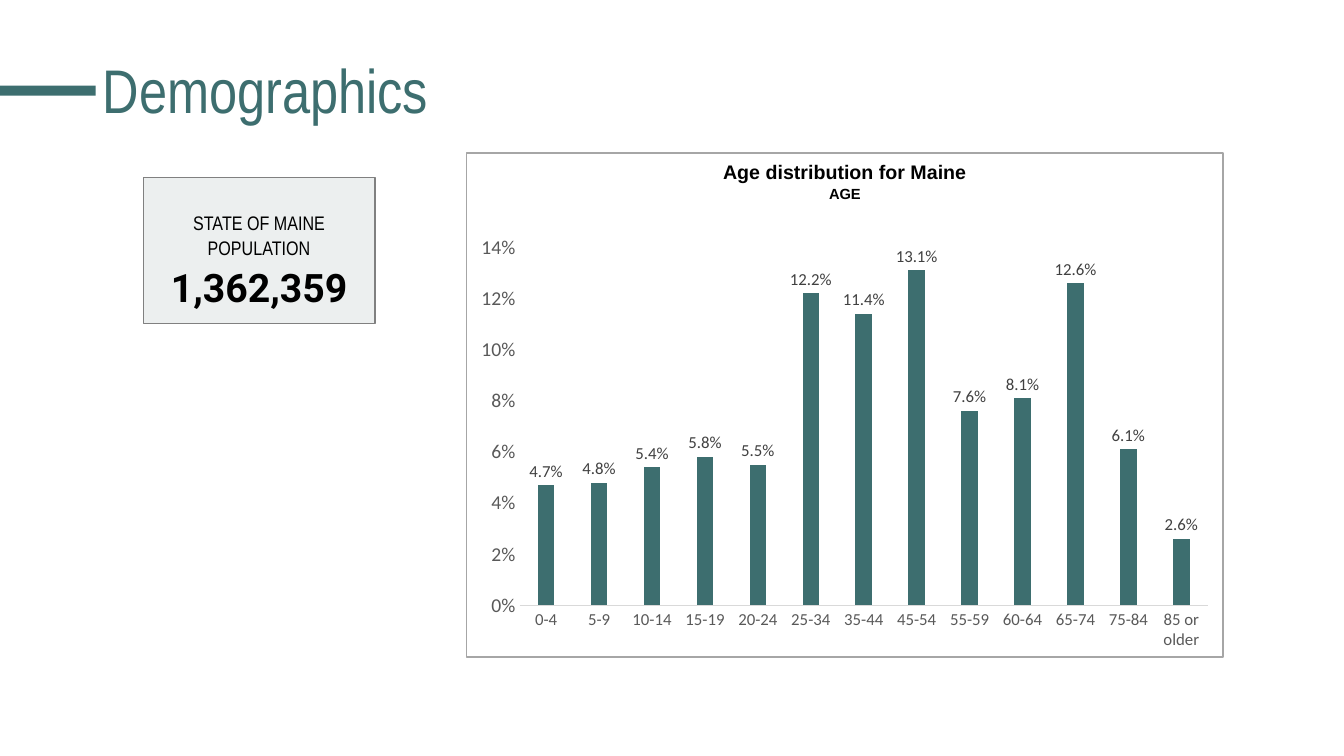
from lxml import etree
from pptx import Presentation
from pptx.chart.data import CategoryChartData
from pptx.dml.color import RGBColor
from pptx.enum.chart import XL_CHART_TYPE as ChartType
from pptx.enum.chart import XL_LABEL_POSITION as LabelPosition
from pptx.enum.chart import XL_TICK_MARK as TickMark
from pptx.enum.shapes import MSO_SHAPE as Preset
from pptx.enum.text import MSO_ANCHOR as Anchor
from pptx.enum.text import PP_ALIGN as Align
from pptx.oxml.ns import qn
from pptx.util import Inches, Pt

TEAL, BLACK = "3D6E6F", "000000"
AGE_SHARES = {
    "0-4": 0.047, "5-9": 0.048, "10-14": 0.054, "15-19": 0.058, "20-24": 0.055,
    "25-34": 0.122, "35-44": 0.114, "45-54": 0.131, "55-59": 0.076, "60-64": 0.081,
    "65-74": 0.126, "75-84": 0.061, "85 or older": 0.026,
}


def color(hex_text):
    return RGBColor.from_string(hex_text)


def style(font, name, size, hex_text, bold=False):
    font.name, font.size, font.bold = name, Pt(size), bold
    font.color.rgb = color(hex_text)


def add_rect(page, box, fill=None, line=None, width=0.75):
    rect = page.shapes.add_shape(Preset.RECTANGLE, *map(Inches, box))
    rect.shadow.inherit = False
    if fill:
        rect.fill.solid()
        rect.fill.fore_color.rgb = color(fill)
    else:
        rect.fill.background()
    if line:
        rect.line.color.rgb = color(line)
        rect.line.width = Pt(width)
    else:
        rect.line.fill.background()
    return rect


def write_lines(frame, lines, align, spacing):
    """Each line is (text, font, size, colour, bold)."""
    frame.word_wrap = True
    frame.text = "\n".join(line[0] for line in lines)
    for para, (_, *look) in zip(frame.paragraphs, lines):
        para.alignment, para.line_spacing = align, spacing
        for span in para.runs:
            style(span.font, *look)


def add_heading(page, box):
    left, top, width, height = box
    # Accent bar from the slide edge to the title
    add_rect(page, (0, top + 0.65, left + 0.03, 0.1), fill=TEAL)
    title = page.shapes.add_textbox(*map(Inches, box))
    title.text_frame.vertical_anchor = Anchor.MIDDLE
    write_lines(title.text_frame, [("Demographics", "Arial Narrow", 44, TEAL, False)],
                Align.LEFT, 0.9)


def add_population_card(page, box):
    frame = add_rect(page, box, fill="ECEFEF", line="808080").text_frame
    frame.vertical_anchor = Anchor.MIDDLE
    frame.margin_left = frame.margin_right = frame.margin_bottom = 0
    frame.margin_top = Inches(0.18)
    write_lines(frame, [
        ("STATE OF MAINE", "Arial Narrow", 14, BLACK, False),
        ("POPULATION", "Arial Narrow", 14, BLACK, False),
        ("1,362,359", "Roboto", 28, BLACK, True),
    ], Align.CENTER, 1.07)


def place_plot(chart, **shares):
    """Fix the inner plot area as shares of the chart."""
    area = chart.plots[0]._element.getparent()
    for old in area.findall(qn("c:layout")):
        area.remove(old)
    layout = etree.Element(qn("c:layout"))
    manual = etree.SubElement(layout, qn("c:manualLayout"))
    settings = {"layoutTarget": "inner", "xMode": "edge", "yMode": "edge", **shares}
    for tag, value in settings.items():
        etree.SubElement(manual, qn(f"c:{tag}")).set("val", str(value))
    area.insert(0, layout)


def add_age_chart(page, box):
    data = CategoryChartData(number_format="0.0%")
    data.categories = list(AGE_SHARES)
    data.add_series("Series 1", list(AGE_SHARES.values()))
    chart = page.shapes.add_chart(ChartType.COLUMN_CLUSTERED, *map(Inches, box), data).chart
    chart.has_legend = chart.has_title = False
    style(chart.font, "Calibri", 10, BLACK)
    place_plot(chart, x=0.07, y=0.05, w=0.91, h=0.83)

    # Axes
    ages, shares = chart.category_axis, chart.value_axis
    for axis, size in ((ages, 12), (shares, 14)):
        axis.major_tick_mark = axis.minor_tick_mark = TickMark.NONE
        axis.has_major_gridlines = False
        style(axis.tick_labels.font, "Calibri", size, "595959")
    ages.format.line.color.rgb = color("D9D9D9")
    ages.format.line.width = Pt(0.75)
    shares.format.line.fill.background()
    shares.minimum_scale, shares.maximum_scale, shares.major_unit = 0, 0.14, 0.02
    shares.tick_labels.number_format = "0%"
    shares.tick_labels.number_format_is_linked = False

    # Columns and their labels
    plot = chart.plots[0]
    plot.vary_by_categories = False
    plot.gap_width, plot.overlap = 219, -27
    columns = plot.series[0]
    columns.format.fill.solid()
    columns.format.fill.fore_color.rgb = color(TEAL)
    labels = columns.data_labels
    labels.show_value = True
    labels.position = LabelPosition.OUTSIDE_END
    labels.number_format, labels.number_format_is_linked = "0.0%", False
    style(labels.font, "Calibri", 12, "404040")


def add_age_panel(page, box):
    left, top, width, height = box
    frame = add_rect(page, box, line="A6A6A6", width=1).text_frame
    frame.vertical_anchor = Anchor.TOP
    write_lines(frame, [
        ("Age distribution for Maine", "Arial", 14, BLACK, True),
        ("AGE", "Arial", 10.5, BLACK, True),
    ], Align.CENTER, 1.07)
    caption = 0.72
    add_age_chart(page, (left, top + caption, width, height - caption))


def main():
    deck = Presentation()
    deck.slide_width, deck.slide_height = Inches(13.33), Inches(7.5)
    page = deck.slides.add_slide(deck.slide_layouts[6])
    add_heading(page, (0.92, 0.2, 11.5, 1.45))
    add_population_card(page, (1.42, 1.76, 2.3, 1.45))
    add_age_panel(page, (4.63, 1.52, 7.5, 5))
    deck.save("out.pptx")


if __name__ == "__main__":
    main()
